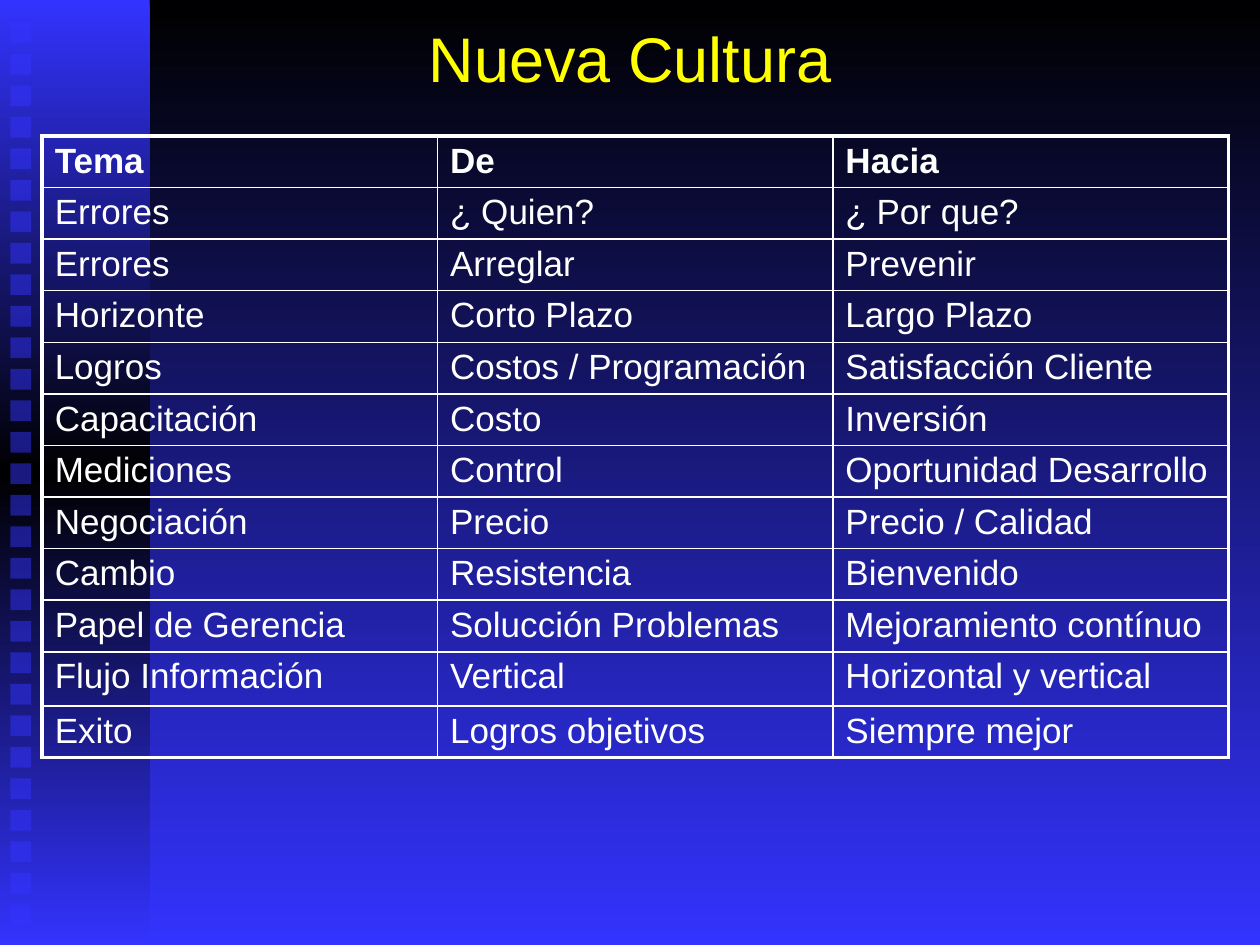
"""Build the "Nueva Cultura" slide: a three-column table beside a decorated band."""
from copy import deepcopy
from pptx import Presentation, oxml
from pptx import util as u
from pptx.dml.color import RGBColor
from pptx.enum import shapes, text
from pptx.oxml import ns

theme = {
    "blue": RGBColor(0x33, 0x33, 0xFF),
    "black": RGBColor(0, 0, 0),
    "white": RGBColor(0xFF, 0xFF, 0xFF),
    "yellow": RGBColor(0xFF, 0xFF, 0),
    "font": "Arial",
    "title_size": u.Pt(36),
    "cell_size": u.Pt(20),
    "outer_line": u.Pt(2.25),
    "inner_line": u.Pt(1),
}
topics = [
    ("Tema", "De", "Hacia"),
    ("Errores", "¿ Quien?", "¿ Por que?"),
    ("Errores", "Arreglar", "Prevenir"),
    ("Horizonte", "Corto Plazo", "Largo Plazo"),
    ("Logros", "Costos / Programación", "Satisfacción Cliente"),
    ("Capacitación", "Costo", "Inversión"),
    ("Mediciones", "Control", "Oportunidad Desarrollo"),
    ("Negociación", "Precio", "Precio / Calidad"),
    ("Cambio", "Resistencia", "Bienvenido"),
    ("Papel de Gerencia", "Solucción Problemas", "Mejoramiento contínuo"),
    ("Flujo Información", "Vertical", "Horizontal y vertical"),
    ("Exito", "Logros objetivos", "Siempre mejor"),
]


def apply_format(target, values):
    for name, value in values.items():
        setattr(target, name, value)


def paint_gradient(fill, holder, colours):
    fill.gradient()
    fill.gradient_angle = 270
    stop_list = holder.xpath(".//a:gsLst")[0]
    while len(stop_list) < len(colours):
        stop_list.append(deepcopy(stop_list[0]))
    for i, (stop, colour) in enumerate(zip(fill.gradient_stops, colours)):
        stop.color.rgb = colour
        stop.position = i / (len(colours) - 1)


deck = Presentation()
apply_format(deck, {"slide_width": u.Cm(25.4), "slide_height": u.Cm(19.05)})
slide = deck.slides.add_slide(deck.slide_layouts[5])
paint_gradient(slide.background.fill, slide.element, [theme["black"], theme["blue"]])

band = slide.shapes.add_shape(
    shapes.MSO_SHAPE.RECTANGLE, 0, 0, u.Cm(3.02), deck.slide_height)
band.shadow.inherit = False
band.line.fill.background()
paint_gradient(band.fill, band.element, [theme["blue"], theme["black"], theme["blue"]])

for i in range(29):
    square = slide.shapes.add_shape(
        shapes.MSO_SHAPE.RECTANGLE,
        u.Cm(0.21), u.Cm(0.45 + i * 2.54 / 4), u.Cm(0.42), u.Cm(0.42))
    square.shadow.inherit = False
    square.line.fill.background()
    square.fill.solid()
    square.fill.fore_color.rgb = theme["blue"]
    tint = square.element.xpath("./p:spPr/a:solidFill/a:srgbClr")[0]
    tint.append(oxml.parse_xml(f'<a:alpha {ns.nsdecls("a")} val="50000"/>'))

heading = slide.shapes.title
slide.shapes.element.append(heading.element)
apply_format(heading, {"left": u.Cm(1.9), "top": u.Cm(-0.43),
                       "width": u.Cm(21.6), "height": u.Cm(3.18)})
heading.text_frame.text = "Nueva Cultura"
heading.text_frame.vertical_anchor = text.MSO_ANCHOR.MIDDLE
heading_line = heading.text_frame.paragraphs[0]
heading_line.alignment = text.PP_ALIGN.CENTER
apply_format(heading_line.runs[0].font, {"name": theme["font"], "size": theme["title_size"]})
heading_line.runs[0].font.color.rgb = theme["yellow"]

last_row, last_column = len(topics) - 1, len(topics[0]) - 1
culture = slide.shapes.add_table(
    len(topics), len(topics[0]), u.Cm(0.85), u.Cm(2.74), u.Cm(23.91), u.Cm(12.53)).table
apply_format(culture, {"first_row": False, "horz_banding": False})
for column in culture.columns:
    column.width = u.Cm(7.97)
for r, topic in enumerate(topics):
    culture.rows[r].height = u.Cm(1.09 if r == last_row - 1 else 1.04)
    for c, wording in enumerate(topic):
        cell = culture.cell(r, c)
        cell.text = wording
        apply_format(cell, {"margin_top": u.Cm(0.11), "margin_bottom": u.Cm(0.11)})
        cell.fill.background()
        font = cell.text_frame.paragraphs[0].runs[0].font
        apply_format(font, {"name": theme["font"], "size": theme["cell_size"], "bold": r == 0})
        font.color.rgb = theme["white"]
        edges = {"lnL": c == 0, "lnR": c == last_column, "lnT": r == 0, "lnB": r == last_row}
        for i, (side, is_outer) in enumerate(edges.items()):
            width = theme["outer_line" if is_outer else "inner_line"]
            cell._tc.get_or_add_tcPr().insert(i, oxml.parse_xml(
                f'<a:{side} {ns.nsdecls("a")} w="{int(width)}"><a:solidFill>'
                f'<a:srgbClr val="{theme["white"]}"/></a:solidFill></a:{side}>'))

deck.save("out.pptx")
